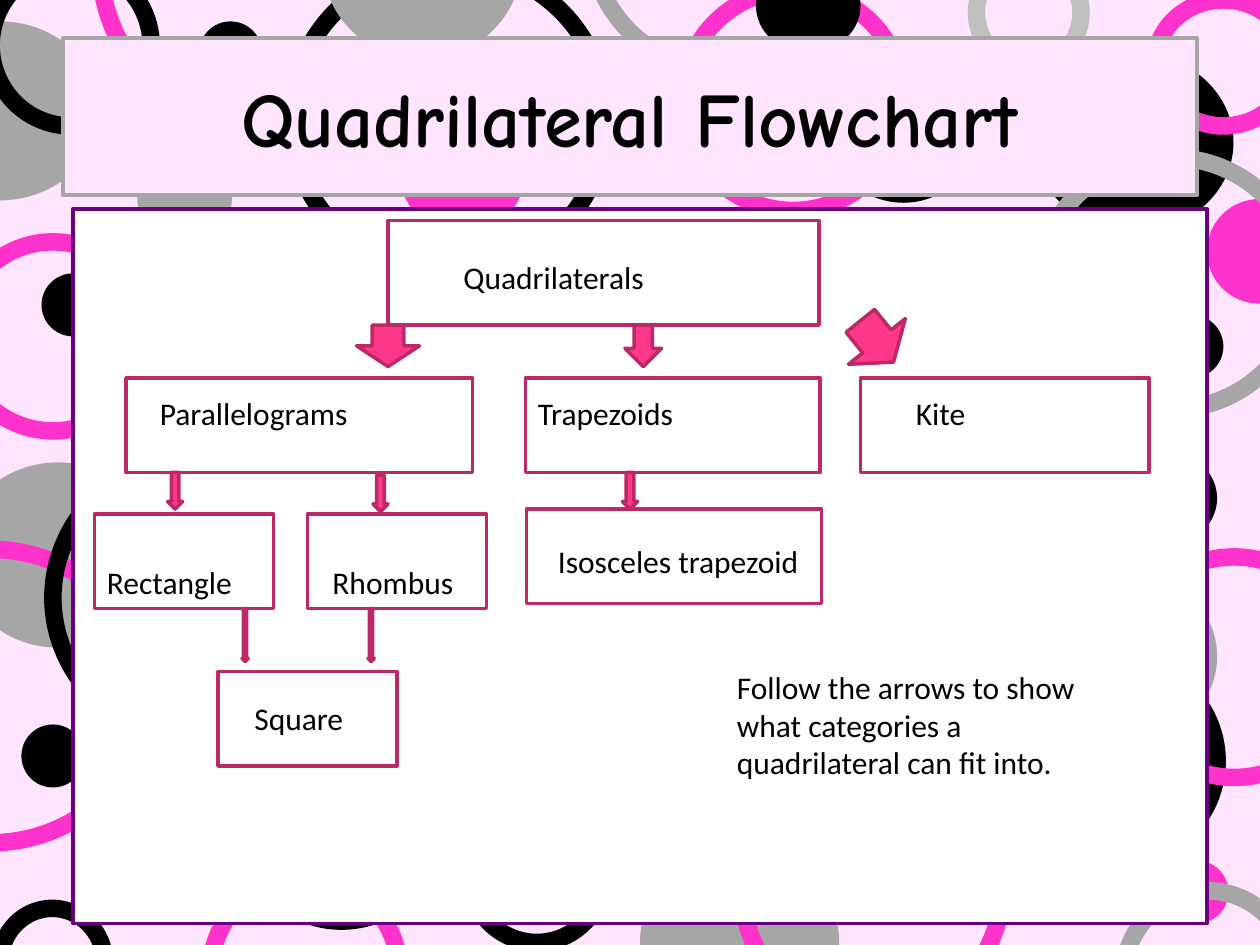
from lxml.etree import SubElement
from pptx import Presentation
from pptx.dml.color import RGBColor
from pptx.enum.shapes import MSO_SHAPE
from pptx.enum.text import MSO_ANCHOR, MSO_AUTO_SIZE, PP_ALIGN
from pptx.oxml.ns import qn
from pptx.util import Inches, Pt

COLORS = {
    "pale": "FFE5FF", "gray": "A6A6A6", "silver": "BFBFBF", "black": "000000",
    "white": "FFFFFF", "pink": "FF33CC", "purple": "68007F",
    "arrow": "FF388C", "edge": "BD2968",
}
TITLE = "Quadrilateral Flowchart"
CIRCLES = [
    ("ring", "black", 2.31, -0.28, 2.5, 2.45),
    ("disc", "gray", -0.79, 0.17, 1.58, 1.42),
    ("disc", "pink", 3.17, 0.86, 1, 1),
    ("ring", "black", 0, 7.21, 0.83, 0.86),
    ("disc", "black", 1.92, 5.91, 1.58, 1.47),
    ("ring", "pink", 1.67, 6.95, 1.5, 1.55),
    ("disc", "gray", -0.33, 3.67, 1.58, 1.47),
    ("ring", "pink", -1.33, 4.36, 2.5, 2.33),
    ("ring", "black", 0.42, 3.58, 2.5, 2.33),
    ("disc", "gray", 1.09, 1.2, 0.75, 0.75),
    ("ring", "pink", -0.33, 1.92, 1.5, 1.5),
    ("disc", "gray", 5.08, 6.69, 1.58, 1.57),
    ("ring", "black", 3.72, 6.37, 1.08, 1.11),
    ("ring", "pink", 5.88, 5.9, 2.08, 2.21),
    ("disc", "gray", 8.08, 4.5, 1.58, 1.42),
    ("ring", "black", 8.08, 5.25, 1.58, 1.58),
    ("ring", "pink", 8.92, 4.42, 1.75, 1.75),
    ("disc", "pink", 9.25, 6.83, 0.5, 0.5),
    ("disc", "black", 0.33, 2.17, 0.5, 0.5),
    ("ring", "pink", 5.42, -0.08, 1.75, 1.75),
    ("disc", "black", 0.17, 5.75, 0.5, 0.5),
    ("disc", "black", 1.58, 0.17, 0.5, 0.5),
    ("ring", "black", 6.63, 0.47, 1.08, 1.07),
    ("disc", "black", 8.83, 3.58, 0.83, 0.75),
    ("disc", "pink", 9.58, 1.58, 0.83, 0.83),
    ("disc", "black", 8.21, 0.42, 1.58, 1.42),
    ("ring", "pink", 9.17, 0, 1.08, 1),
    ("ring", "gray", 8.25, 1.25, 2.08, 2),
    ("disc", "black", 9.21, 2.5, 0.5, 0.5),
    ("ring", "gray", 8.92, 7.07, 1.33, 1.35),
    ("ring", "pink", 0.8, -1.48, 2.5, 2.45),
    ("ring", "gray", 4.68, -1.59, 2.08, 2.14),
    ("ring", "silver", 7.75, -0.33, 0.83, 0.86),
    ("disc", "black", 6, -0.33, 0.83, 0.75),
    ("ring", "black", -0.07, -0.28, 1.27, 1.28),
    ("disc", "gray", 2.56, -1.07, 1.58, 1.54),
]
BOX_H = 0.75
BOX_ROWS = [
    (1.75, 0.83, [(3.08, 3.42)]),
    (3, BOX_H, [(1, 2.75), (4.17, 2.34), (6.83, 2.29)]),
    (4.08, BOX_H, [(0.75, 1.42), (2.44, 1.42)]),
    (4.04, BOX_H, [(4.18, 2.34)]),
    (5.33, BOX_H, [(1.73, 1.42)]),
]
LABELS = [
    ("Quadrilaterals", (3.58, 2, 2.33, 0.42), ()),
    ("Parallelograms\tTrapezoids\tKite", (1.17, 3.08, 7.58, 0.4), (3, 6)),
    ("Rectangle\tRhombus", (0.75, 4.42, 3.1, 0.4), (1.79,)),
    ("Square", (1.92, 5.5, 0.92, 0.42), ()),
    ("Isosceles trapezoid", (4.33, 4.25, 2.17, 0.4), ()),
    ("Follow the arrows to show what categories a quadrilateral can fit into.",
     (5.75, 5.25, 3, 1.01), ()),
]
ARROWS = [
    (4.96, 2.58, 0.29, 0.33, 0), (2.83, 2.58, 0.5, 0.33, 0),
    (6.67, 2.5, 0.58, 0.42, 321.2),
    (1.33, 3.75, 0.12, 0.29, 0), (2.96, 3.77, 0.12, 0.29, 0),
    (4.94, 3.75, 0.12, 0.29, 0),
    (1.92, 4.83, 0.05, 0.42, 0), (2.92, 4.83, 0.05, 0.42, 0),
]


def rgb(name):
    return RGBColor.from_string(COLORS[name])


def paint(sp, fill=None, line=None, width=2):
    if fill:
        sp.fill.solid()
        sp.fill.fore_color.rgb = rgb(fill)
    else:
        sp.fill.background()
    if line:
        sp.line.color.rgb = rgb(line)
        sp.line.width = Pt(width)
    else:
        sp.line.fill.background()


def add_shape(s, kind, at, rotation=0, **style):
    sp = s.shapes.add_shape(kind, *map(Inches, at))
    sp.shadow.inherit = False
    sp.rotation = rotation
    paint(sp, **style)
    return sp


def write(tf, text, size=18, font="Calibri", bold=False, align=PP_ALIGN.LEFT,
          anchor=MSO_ANCHOR.TOP, fit=MSO_AUTO_SIZE.SHAPE_TO_FIT_TEXT, tabs=()):
    tf.word_wrap = True
    tf.auto_size = fit
    tf.vertical_anchor = anchor
    p = tf.paragraphs[0]
    p.alignment = align
    if tabs:
        stops = SubElement(p._p.get_or_add_pPr(), qn("a:tabLst"))
        for pos in tabs:
            SubElement(stops, qn("a:tab"), pos=str(Inches(pos)), algn="l")
    r = p.add_run()
    r.text = text
    r.font.size = Pt(size)
    r.font.name = font
    r.font.bold = bold
    r.font.color.rgb = rgb("black")


def main():
    prs = Presentation()
    prs.slide_width, prs.slide_height = Inches(10), Inches(7.5)
    s = prs.slides.add_slide(prs.slide_layouts[5])
    s.background.fill.solid()
    s.background.fill.fore_color.rgb = rgb("pale")

    for kind, color, *at in CIRCLES:
        style = {"fill": color} if kind == "disc" else {"line": color, "width": 10}
        add_shape(s, MSO_SHAPE.OVAL, at, **style)

    title = s.shapes.title
    title.element.getparent().append(title.element)
    title.left, title.top, title.width, title.height = map(Inches, (0.5, 0.3, 9, 1.25))
    paint(title, fill="pale", line="gray", width=2.25)
    write(title.text_frame, TITLE, size=44, font="Comic Neue", bold=True,
          align=PP_ALIGN.CENTER, anchor=MSO_ANCHOR.MIDDLE, fit=MSO_AUTO_SIZE.NONE)

    add_shape(s, MSO_SHAPE.RECTANGLE, (0.58, 1.66, 9, 5.67), fill="white", line="purple")
    for top, height, boxes in BOX_ROWS:
        for left, width in boxes:
            add_shape(s, MSO_SHAPE.FLOWCHART_PROCESS, (left, top, width, height),
                      fill="white", line="edge")
    for text, at, tabs in LABELS:
        write(s.shapes.add_textbox(*map(Inches, at)).text_frame, text, tabs=tabs)
    for *at, rotation in ARROWS:
        add_shape(s, MSO_SHAPE.DOWN_ARROW, at, rotation, fill="arrow", line="edge")

    prs.save("out.pptx")


if __name__ == "__main__":
    main()
